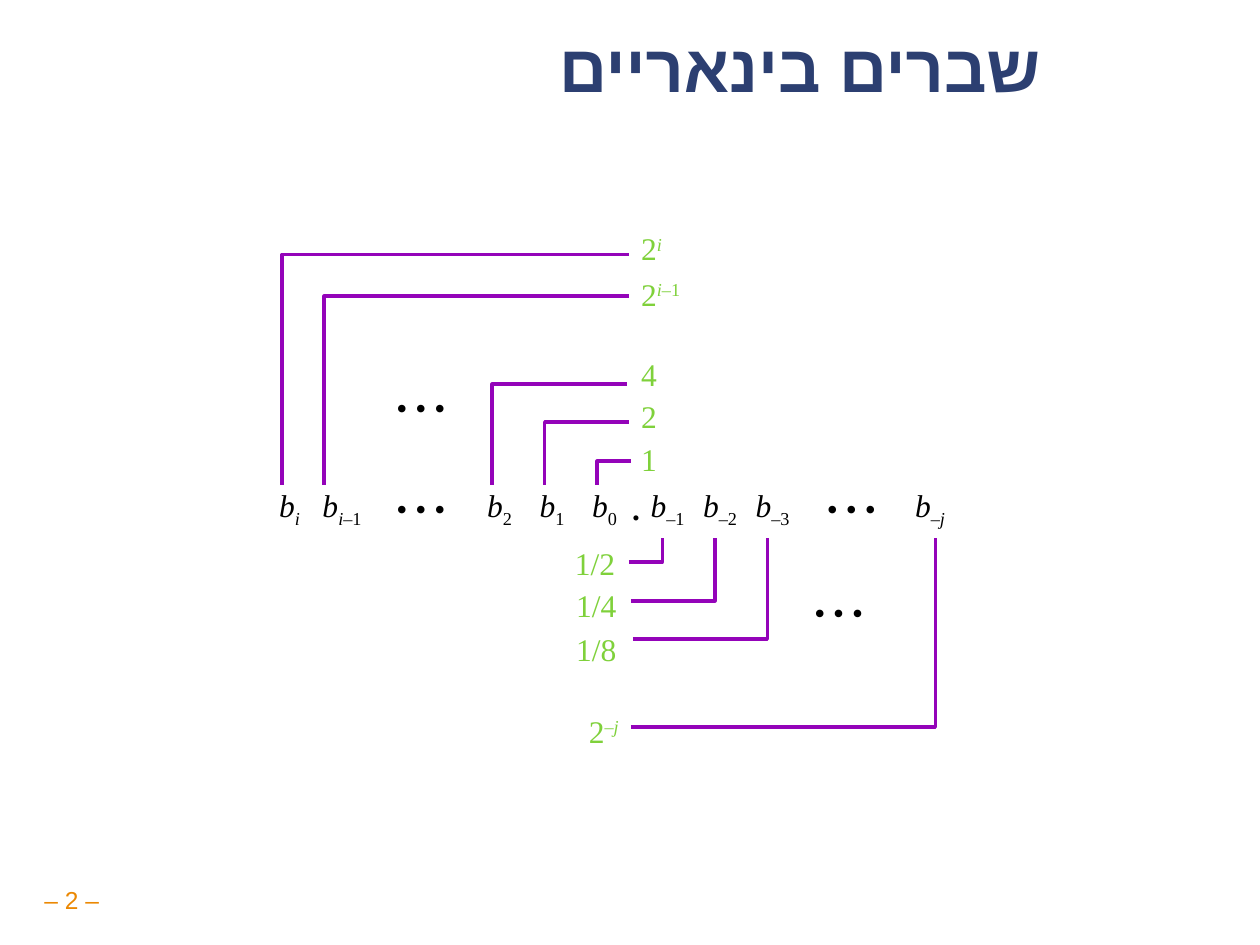
from dataclasses import dataclass
from typing import NamedTuple

from lxml import etree
from pptx import Presentation
from pptx import util as u
from pptx.dml.color import RGBColor
from pptx.enum import shapes, text
from pptx.oxml import ns


@dataclass(frozen=True)
class Theme:
    title: str = "2C3F71"
    title_shadow: str = "969696"
    digit: str = "000000"
    weight: str = "7FD13B"
    bracket: str = "9403B9"
    number: str = "EB8803"
    paper: str = "FFFFFF"
    sans: str = "Arial"
    serif: str = "Times New Roman"
    title_size: float = 38
    body_size: float = 18
    number_size: float = 14
    line_width: float = 2


class Span(NamedTuple):
    text: str
    italic: bool = False
    base: int = 0       # shift above or below the line, in percent


class Cell(NamedTuple):
    column: float
    spans: list[Span]
    width: float = 1    # in columns
    bold: bool = False


class Bracket(NamedTuple):
    stem: float         # column of the vertical part
    end: float          # column where the horizontal part stops
    rows: float         # distance from the digit row


class Weight(NamedTuple):
    left: float
    top: float
    width: float
    spans: list[Span]


THEME = Theme()

# Grid of the diagram, in inches
LEFT, COLUMN = 2.09, 5 / 12
ROW = 0.1
DIGIT_TOP, CELL_HEIGHT = 3.74, 0.58
UPPER, LOWER = 3.85, 4.27           # where brackets meet the digits
WEIGHT_HEIGHT = 0.4
DOTS = [Span("• • •")]


def digit(column: float, *index: Span) -> Cell:
    return Cell(column, [Span("b", True), *(s._replace(base=-25) for s in index)])


CELLS = [
    digit(0, Span("i", True)),
    digit(1, Span("i", True), Span("–1")),
    *(digit(6 - n, Span(str(n))) for n in (2, 1, 0)),
    *(digit(6.2 + n, Span(f"–{n}")) for n in (1, 2, 3)),
    digit(12.2, Span("–"), Span("j", True)),
    Cell(10.2, DOTS, 2),
    Cell(2, DOTS, 2),
    Cell(7, [Span(".")], 0.2, True),
]
UPPER_BRACKETS = [
    Bracket(6.36, 7, 1.9), Bracket(5.36, 6.96, 5), Bracket(4.36, 6.92, 8),
    Bracket(1.16, 6.96, 15), Bracket(0.36, 6.96, 18.3),
]
LOWER_BRACKETS = [
    Bracket(7.6, 6.96, 1.9), Bracket(8.6, 7, 5),
    Bracket(9.6, 7.04, 8), Bracket(12.8, 7, 15),
]
UPPER_WEIGHTS = [
    Weight(4.99, 3.44, 0.33, [Span("1")]),
    Weight(4.99, 3.1, 0.33, [Span("2")]),
    Weight(4.99, 2.77, 0.33, [Span("4")]),
    Weight(4.99, 2.13, 0.54, [Span("2"), Span("i", True, 30), Span("–1", base=30)]),
    Weight(4.99, 1.77, 0.37, [Span("2"), Span("i", True, 30)]),
]
LOWER_WEIGHTS = [
    Weight(4.46, 4.27, 0.52, [Span("1/2")]),
    Weight(4.47, 4.6, 0.52, [Span("1/4")]),
    Weight(4.47, 4.95, 0.52, [Span("1/8")]),
    Weight(4.55, 5.6, 0.46, [Span("2"), Span("–", base=30), Span("j", True, 30)]),
]


def at_column(column: float) -> float:
    return LEFT + column * COLUMN


def inches(*lengths: float) -> list[u.Length]:
    return [u.Inches(length) for length in lengths]


def write(box, spans: list[Span], *, color: str, size: float = THEME.body_size,
          font: str = THEME.serif, bold: bool = False,
          align=text.PP_ALIGN.LEFT, anchor=text.MSO_ANCHOR.TOP,
          inset: float | None = None, spacing: float | None = None,
          wrap: bool = False, fit=text.MSO_AUTO_SIZE.NONE):
    """Fill the first paragraph of a box with spans and return it."""
    frame = box.text_frame
    frame.word_wrap, frame.auto_size, frame.vertical_anchor = wrap, fit, anchor
    if inset is not None:
        frame.margin_left = frame.margin_right = u.Inches(inset)
        frame.margin_top = frame.margin_bottom = u.Inches(inset)
    para = frame.paragraphs[0]
    para.alignment = align
    if spacing is not None:
        para.line_spacing = spacing
    for item in spans:
        span = para.add_run()
        span.text = item.text
        span.font.name, span.font.size = font, u.Pt(size)
        span.font.bold, span.font.italic = bold, item.italic
        span.font.color.rgb = RGBColor.from_string(color)
        if item.base:
            span.font._element.set("baseline", str(item.base * 1000))
    return para


def draw_title(page) -> None:
    box = page.shapes.title
    box.left, box.top, box.width, box.height = inches(0.75, 0.25, 7.51, 0.63)
    para = write(box, [Span("שברים בינאריים")], color=THEME.title,
                 size=THEME.title_size, font=THEME.sans, bold=True, inset=0,
                 align=text.PP_ALIGN.RIGHT, anchor=text.MSO_ANCHOR.MIDDLE,
                 spacing=0.87, wrap=True)
    para._p.get_or_add_pPr().set("rtl", "1")
    # Hebrew font and text shadow
    props = para.runs[0].font._element
    props.set("lang", "he-IL")
    script = etree.Element(ns.qn("a:cs"), typeface=THEME.sans)
    props.find(ns.qn("a:latin")).addnext(script)
    effects = etree.Element(ns.qn("a:effectLst"))
    shadow = etree.SubElement(effects, ns.qn("a:outerShdw"),
                              dist="63500", dir="2700000", algn="tl")
    etree.SubElement(shadow, ns.qn("a:srgbClr"), val=THEME.title_shadow)
    props.find(ns.qn("a:solidFill")).addnext(effects)


def draw_cell(parent, cell: Cell, left: float, top: float, rotation: float = 0) -> None:
    box = parent.add_shape(shapes.MSO_SHAPE.RECTANGLE,
                           *inches(left, top, cell.width * COLUMN, CELL_HEIGHT))
    box.shadow.inherit = False
    box.fill.solid()
    box.fill.fore_color.rgb = RGBColor.from_string(THEME.paper)
    box.line.fill.background()
    box.rotation = rotation
    write(box, cell.spans, color=THEME.digit, bold=cell.bold,
          align=text.PP_ALIGN.CENTER, anchor=text.MSO_ANCHOR.MIDDLE)


def draw_bracket(page, bracket: Bracket, base: float, direction: int) -> None:
    stem, end = inches(at_column(bracket.stem), at_column(bracket.end))
    foot, level = inches(base, base + direction * bracket.rows * ROW)
    builder = page.shapes.build_freeform(end, level)
    builder.add_line_segments([(stem, level), (stem, foot)], close=False)
    shape = builder.convert_to_shape()
    shape.shadow.inherit = False
    shape.fill.background()
    shape.line.color.rgb = RGBColor.from_string(THEME.bracket)
    shape.line.width = u.Pt(THEME.line_width)


def draw_weight(page, weight: Weight, align) -> None:
    box = page.shapes.add_textbox(
        *inches(weight.left, weight.top, weight.width, WEIGHT_HEIGHT))
    write(box, weight.spans, color=THEME.weight, align=align,
          fit=text.MSO_AUTO_SIZE.SHAPE_TO_FIT_TEXT)


def main() -> None:
    deck = Presentation()
    deck.slide_width, deck.slide_height = inches(10, 7.5)
    page = deck.slides.add_slide(deck.slide_layouts[5])
    draw_title(page)

    # Page number
    number = page.shapes.add_textbox(*inches(0.24, 7, 0.66, 0.31))
    write(number, [Span("– 2 –")], color=THEME.number, size=THEME.number_size,
          font=THEME.sans, align=text.PP_ALIGN.CENTER,
          anchor=text.MSO_ANCHOR.MIDDLE, inset=0.05, spacing=0.9,
          fit=text.MSO_AUTO_SIZE.SHAPE_TO_FIT_TEXT)

    # Row of digits
    digits = page.shapes.add_group_shape()
    for cell in CELLS:
        draw_cell(digits.shapes, cell, at_column(cell.column), DIGIT_TOP)

    # Whole part above, fractional part below
    for weight in UPPER_WEIGHTS:
        draw_weight(page, weight, text.PP_ALIGN.LEFT)
    for bracket in UPPER_BRACKETS:
        draw_bracket(page, bracket, UPPER, -1)
    draw_cell(page.shapes, Cell(2, DOTS, 2), at_column(2), 2.94)
    for bracket in LOWER_BRACKETS:
        draw_bracket(page, bracket, LOWER, 1)
    draw_cell(page.shapes, Cell(10, DOTS, 2), 6.24, 4.6, rotation=180)
    for weight in LOWER_WEIGHTS:
        draw_weight(page, weight, text.PP_ALIGN.RIGHT)

    deck.save("out.pptx")


if __name__ == "__main__":
    main()
